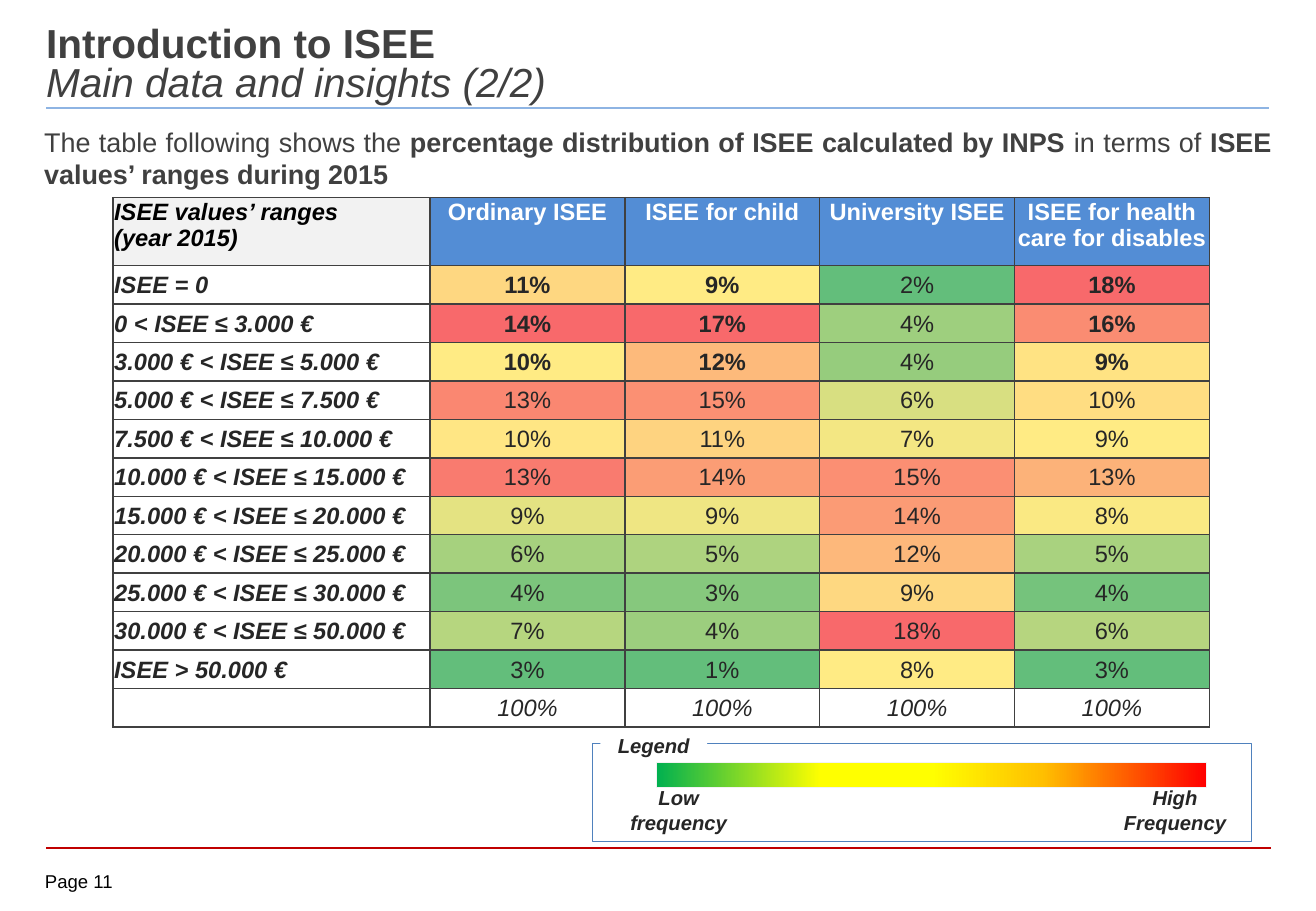
import lxml.etree
import pptx
import pptx.dml.color
import pptx.enum.shapes
import pptx.enum.text
import pptx.oxml.ns
import pptx.util

PX = 3048
ALIGN = pptx.enum.text.PP_ALIGN
ANCHOR = pptx.enum.text.MSO_ANCHOR
RECTANGLE = pptx.enum.shapes.MSO_SHAPE.RECTANGLE
TITLE_ONLY = 5

HEADINGS = ["Ordinary ISEE", "ISEE for child", "University ISEE", "ISEE for health care for disables"]
RANGES = [
    ("ISEE = 0", [11, 9, 2, 18], "FED781 FFEB84 63BE7B F8696B"),
    ("0 < ISEE ≤ 3.000 €", [14, 17, 4, 16], "F8696B F8696B 9ECF7E FA8C72"),
    ("3.000 € < ISEE ≤ 5.000 €", [10, 12, 4, 9], "FFEB84 FDBA7B 96CC7D FFE383"),
    ("5.000 € < ISEE ≤ 7.500 €", [13, 15, 6, 10], "FA8771 FB9073 D8DF81 FFDD82"),
    ("7.500 € < ISEE ≤ 10.000 €", [10, 11, 7, 9], "FFE684 FED380 F3E783 FFEB84"),
    ("10.000 € < ISEE ≤ 15.000 €", [13, 14, 15, 13], "F97B6F FB9D75 FB8F73 FCB279"),
    ("15.000 € < ISEE ≤ 20.000 €", [9, 9, 14, 8], "E4E382 EFE683 FB9B75 FAE983"),
    ("20.000 € < ISEE ≤ 25.000 €", [6, 5, 12, 5], "A6D17E AED37F FDB87B A9D27F"),
    ("25.000 € < ISEE ≤ 30.000 €", [4, 3, 9, 4], "7CC57C 86C87D FED881 75C37C"),
    ("30.000 € < ISEE ≤ 50.000 €", [7, 4, 18, 6], "B6D67F 9CCE7E F8696B B6D57F"),
    ("ISEE > 50.000 €", [3, 1, 8, 3], "63BE7B 63BE7B FFEB84 63BE7B"),
]
BOLD_ROWS, BOLD_FROM = 3, 9


def colour(hex_code):
    return pptx.dml.color.RGBColor.from_string(hex_code)


def px(length):
    return pptx.util.Emu(length * PX)


def add_xml(parent, tag, **attributes):
    return lxml.etree.SubElement(parent, pptx.oxml.ns.qn(tag), attributes)


def style(target, formats):
    for name, value in formats.items():
        setattr(target, name, value)


class IseeSlide:
    font = "Arial"
    dark = "404040"
    ink = "262626"

    def __init__(self, presentation):
        self.slide = presentation.slides.add_slide(presentation.slide_layouts[TITLE_ONLY])
        self.shapes = self.slide.shapes

    def fill_text(self, frame, paragraphs, size, hex_code, align=ALIGN.LEFT, anchor=ANCHOR.MIDDLE,
                  inset=(0, 0, 0, 0), spacing=None):
        sides = ("margin_left", "margin_top", "margin_right", "margin_bottom")
        style(frame, dict(zip(sides, map(px, inset)), word_wrap=True, vertical_anchor=anchor))
        for index, runs in enumerate(paragraphs):
            paragraph = frame.add_paragraph() if index else frame.paragraphs[0]
            style(paragraph, {"alignment": align, "line_spacing": spacing})
            for wording, formats in runs:
                run = paragraph.add_run()
                run.text = wording
                look = {"name": self.font, "size": pptx.util.Pt(size), "bold": False, "italic": False}
                style(run.font, {**look, **formats})
                run.font.color.rgb = colour(hex_code)

    def title(self, box, paragraphs, size):
        heading = self.shapes.title
        style(heading, dict(zip(("left", "top", "width", "height"), map(px, box))))
        heading.text_frame.auto_size = pptx.enum.text.MSO_AUTO_SIZE.NONE
        self.fill_text(heading.text_frame, paragraphs, size, self.dark, ALIGN.JUSTIFY, spacing=0.8)

    def text(self, box, paragraphs, size, hex_code, **layout):
        frame = self.shapes.add_textbox(*map(px, box)).text_frame
        self.fill_text(frame, paragraphs, size, hex_code, **layout)

    def rectangle(self, box, fill=None, line=None, weight=0):
        block = self.shapes.add_shape(RECTANGLE, *map(px, box))
        block.shadow.inherit = False
        self.paint(block.fill, fill)
        self.paint(block.line.fill, line)
        if line:
            block.line.width = pptx.util.Pt(weight)
        return block

    def gradient(self, box, stops, line, weight):
        scale = self.rectangle(box, None, line, weight)
        scale.rotation = 180
        scale.fill.gradient()
        scale.fill.gradient_angle = 0
        stop_list = scale._element.spPr.find(".//" + pptx.oxml.ns.qn("a:gsLst"))
        stop_list.clear()
        for position, hex_code in stops:
            stop = add_xml(stop_list, "a:gs", pos=str(position * 1000))
            add_xml(stop, "a:srgbClr", val=hex_code)

    def rule(self, left, right, y, hex_code, weight):
        divider = self.shapes.add_connector(
            pptx.enum.shapes.MSO_CONNECTOR.STRAIGHT, px(left), px(y), px(right), px(y))
        divider.line.color.rgb = colour(hex_code)
        divider.line.width = pptx.util.Pt(weight)
        add_xml(divider._element.spPr, "a:effectLst")

    def paint(self, fill, hex_code):
        if hex_code:
            fill.solid()
            fill.fore_color.rgb = colour(hex_code)
        else:
            fill.background()

    def table(self, left, top, widths, heights):
        box = (left, top, sum(widths), sum(heights))
        grid = self.shapes.add_table(len(heights), len(widths), *map(px, box)).table
        style(grid, {"first_row": False, "horz_banding": False})
        for column, width in zip(grid.columns, widths):
            column.width = px(width)
        for row, height in zip(grid.rows, heights):
            row.height = px(height)
        return grid

    def cell(self, cell, lines, fill=None, hex_code=ink, align=ALIGN.CENTER, anchor=ANCHOR.MIDDLE, **formats):
        properties = cell._tc.get_or_add_tcPr()
        for side in ("a:lnL", "a:lnR", "a:lnT", "a:lnB"):
            border = add_xml(properties, side, w="12700")
            add_xml(add_xml(border, "a:solidFill"), "a:srgbClr", val=self.dark)
        self.paint(cell.fill, fill)
        inset = {"margin_left": px(3), "margin_top": px(3), "margin_right": px(3), "margin_bottom": 0}
        self.fill_text(cell.text_frame, [[(line, formats)] for line in lines], 14, hex_code, align)
        style(cell, {**inset, "vertical_anchor": anchor})


def main():
    presentation = pptx.Presentation()
    style(presentation, {"slide_width": px(3249), "slide_height": px(2250)})
    page = IseeSlide(presentation)
    bold, italic = {"bold": True}, {"italic": True}
    emphasis = {**bold, **italic}

    page.rule(114, 3138, 2094, "C00000", 1)
    page.rule(114, 3132, 267, "8EB4E3", 1.5)
    page.text((111, 2142, 219, 66), [[("Page 11", {})]], 11, "000000")
    page.title((114, 57, 2316, 213), [[("Introduction to ISEE", bold)],
                                      [("Main data and insights (2/2)", italic)]], 24)
    page.text((109, 309, 3030, 162), [[
        ("The table following shows the ", {}),
        ("percentage distribution of ISEE calculated by INPS ", bold),
        ("in terms of ", {}),
        ("ISEE values’ ranges during 2015", bold),
    ]], 16, page.dark, align=ALIGN.JUSTIFY)

    distribution = page.table(279, 488, [783] + [481] * 4, [168] + [95] * 12)
    page.cell(distribution.cell(0, 0), ["ISEE values’ ranges", "(year 2015)"], "F2F2F2", "000000",
              ALIGN.LEFT, ANCHOR.TOP, **emphasis)
    for column, heading in enumerate(HEADINGS, 1):
        page.cell(distribution.cell(0, column), [heading], "538DD5", "FFFFFF", anchor=ANCHOR.TOP, **bold)
    for row, (label, shares, heat) in enumerate(RANGES, 1):
        page.cell(distribution.cell(row, 0), [label], align=ALIGN.LEFT, **emphasis)
        for column, (share, fill) in enumerate(zip(shares, heat.split()), 1):
            page.cell(distribution.cell(row, column), [f"{share}%"], fill,
                      bold=row <= BOLD_ROWS and share >= BOLD_FROM)
    total_row = len(RANGES) + 1
    page.cell(distribution.cell(total_row, 0), [])
    for column in range(1, len(HEADINGS) + 1):
        page.cell(distribution.cell(total_row, column), ["100%"], "FFFFFF", **italic)

    page.gradient((1620, 1884, 1359, 60),
                  [(0, "FF0000"), (30, "FFC000"), (50, "FFFF00"), (70, "FFFF00"), (100, "00B050")],
                  "F2F2F2", 0.5)
    for left, width, level, noun in ((1482, 387, "Low", "frequency"), (2688, 426, "High", "Frequency")):
        page.text((left, 1926, width, 150), [[(level, emphasis)], [(noun, emphasis)]], 12, page.ink,
                  align=ALIGN.CENTER, anchor=ANCHOR.TOP, inset=(30, 15, 30, 15))
    page.rectangle((1461, 1836, 1629, 243), None, "4F81BD", 0.25)
    legend = page.rectangle((1482, 1812, 264, 60), "FFFFFF")
    page.fill_text(legend.text_frame, [[("Legend", emphasis)]], 12, page.ink, ALIGN.CENTER)

    presentation.save("out.pptx")


if __name__ == "__main__":
    main()
